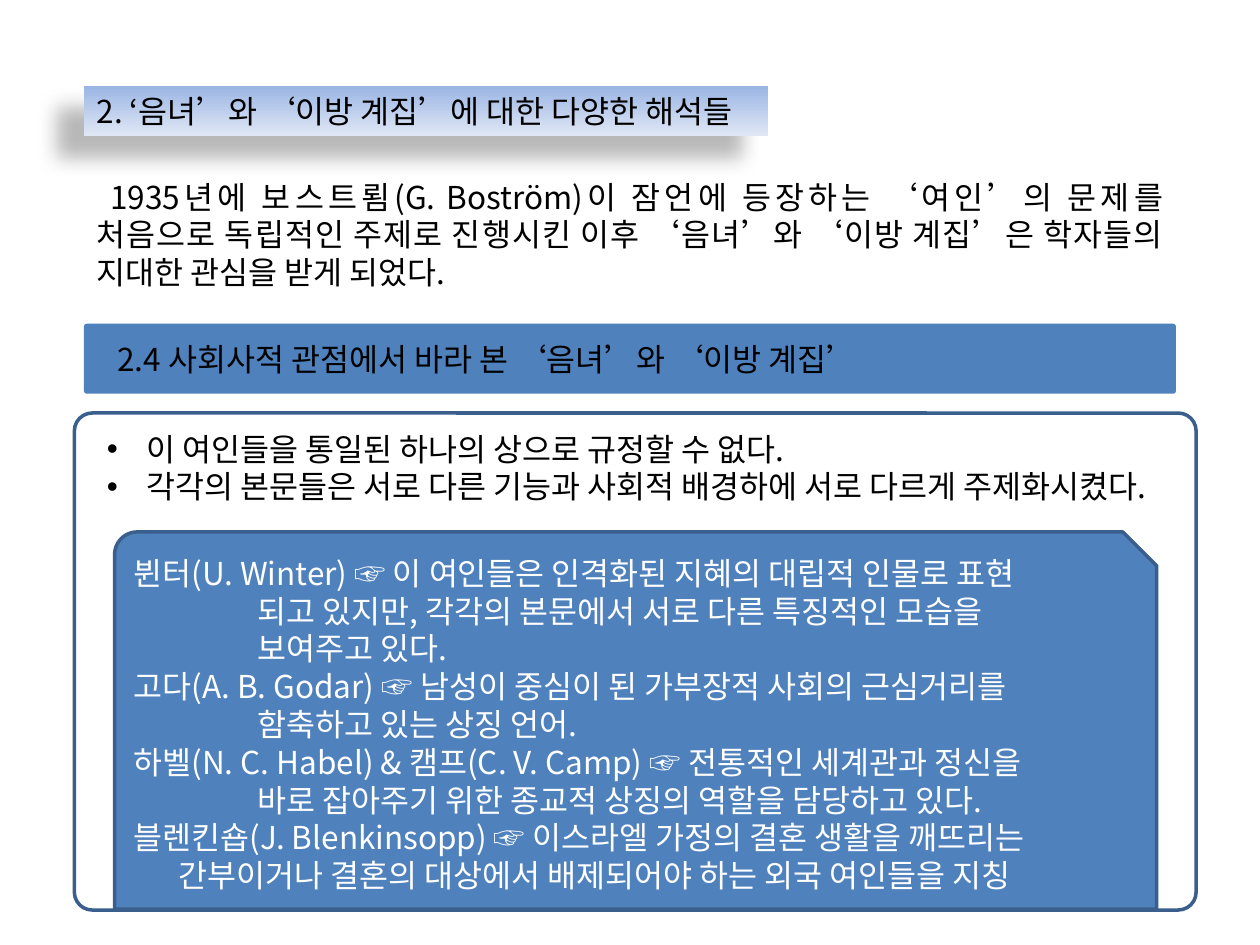
from lxml import etree
from pptx import Presentation
from pptx.dml.color import RGBColor
from pptx.enum.shapes import MSO_SHAPE
from pptx.enum.text import MSO_ANCHOR, PP_ALIGN
from pptx.oxml.ns import qn
from pptx.util import Pt

ROUNDED = MSO_SHAPE.ROUNDED_RECTANGLE
SNIP_ROUND = MSO_SHAPE.SNIP_ROUND_RECTANGLE
LEFT, JUSTIFY = PP_ALIGN.LEFT, PP_ALIGN.JUSTIFY
TOP, MIDDLE = MSO_ANCHOR.TOP, MSO_ANCHOR.MIDDLE

BLACK = RGBColor(0x00, 0x00, 0x00)
WHITE = RGBColor(0xFF, 0xFF, 0xFF)
BLUE = RGBColor(0x4F, 0x81, 0xBD)
DARK_BLUE = RGBColor(0x3A, 0x5F, 0x8C)
GRADIENT = (RGBColor(0x9A, 0xB5, 0xE4), RGBColor(0xE1, 0xE8, 0xF5))

FONT = "Noto Sans CJK KR"
SIZE = Pt(18)
LINE = Pt(21.6)
DEEP, SHALLOW = 71, 25.5

TITLE = "2. ‘음녀’와 ‘이방 계집’에 대한 다양한 해석들"
INTRO = ("1935년에 보스트룀(G. Boström)이 잠언에 등장하는 ‘여인’의 문제를 처음으로 "
         "독립적인 주제로 진행시킨 이후 ‘음녀’와 ‘이방 계집’은 학자들의 지대한 관심을 "
         "받게 되었다.")
SECTION = "2.4 사회사적 관점에서 바라 본 ‘음녀’와 ‘이방 계집’"
POINTS = [
    "이 여인들을 통일된 하나의 상으로 규정할 수 없다.",
    "각각의 본문들은 서로 다른 기능과 사회적 배경하에 서로 다르게 주제화시켰다.",
]
SCHOLARS = [
    ("뷘터(U. Winter) ☞ 이 여인들은 인격화된 지혜의 대립적 인물로 표현", 0),
    ("되고 있지만, 각각의 본문에서 서로 다른 특징적인 모습을", DEEP),
    ("보여주고 있다.", DEEP),
    ("고다(A. B. Godar) ☞ 남성이 중심이 된 가부장적 사회의 근심거리를", 0),
    ("함축하고 있는 상징 언어.", DEEP),
    ("하벨(N. C. Habel) & 캠프(C. V. Camp) ☞ 전통적인 세계관과 정신을", 0),
    ("바로 잡아주기 위한 종교적 상징의 역할을 담당하고 있다.", DEEP),
    ("블렌킨숍(J. Blenkinsopp) ☞ 이스라엘 가정의 결혼 생활을 깨뜨리는", 0),
    ("간부이거나 결혼의 대상에서 배제되어야 하는 외국 여인들을 지칭", SHALLOW),
]


def place(s, left, top, width, height):
    s.left, s.top, s.width, s.height = map(Pt, (left, top, width, height))


def write(s, lines, color=BLACK, align=LEFT, anchor=TOP, bullet=False):
    """Fill a shape with (text, left margin, first-line indent) paragraphs."""
    tf = s.text_frame
    tf.word_wrap = True
    tf.vertical_anchor = anchor
    for i, (text, margin, indent) in enumerate(lines):
        p = tf.paragraphs[0] if i == 0 else tf.add_paragraph()
        p.text = text
        p.alignment = align
        p.line_spacing = LINE
        pPr = p._p.get_or_add_pPr()
        pPr.set("marL", str(Pt(margin)))
        pPr.set("indent", str(Pt(indent)))
        if bullet:
            etree.SubElement(pPr, qn("a:buFont")).set("typeface", "Arial")
            etree.SubElement(pPr, qn("a:buChar")).set("char", "•")
        for r in p.runs:
            r.font.name, r.font.size = FONT, SIZE
            r.font.color.rgb = color
            etree.SubElement(r.font._element, qn("a:ea")).set("typeface", FONT)


def add_text(slide, box, lines, **style):
    s = slide.shapes.add_textbox(*map(Pt, box))
    write(s, lines, **style)


def add_panel(slide, kind, box, adjustments, fill=None, line=None):
    s = slide.shapes.add_shape(kind, *map(Pt, box))
    s.shadow.inherit = False
    for i, value in enumerate(adjustments):
        s.adjustments[i] = value
    if fill is None:
        s.fill.background()
    else:
        s.fill.solid()
        s.fill.fore_color.rgb = fill
    if line is None:
        s.line.fill.background()
    else:
        s.line.color.rgb = line
        s.line.width = Pt(2)
    return s


def add_shadow(s, blur, distance, degrees, opacity):
    effects = etree.SubElement(s._element.spPr, qn("a:effectLst"))
    shadow = etree.SubElement(
        effects, qn("a:outerShdw"), blurRad=str(Pt(blur)), dist=str(Pt(distance)),
        dir=str(degrees * 60000), algn="ctr", rotWithShape="0")
    color = etree.SubElement(shadow, qn("a:srgbClr"), val=str(BLACK))
    etree.SubElement(color, qn("a:alpha"), val=str(opacity * 1000))


def format_title(s):
    place(s, 48, 49, 391, 29)
    write(s, [(TITLE, 0, 0)], anchor=MIDDLE)
    s.fill.gradient()
    s.fill.gradient_angle = 270
    for stop, color in zip(s.fill.gradient_stops, GRADIENT):
        stop.color.rgb = color
    add_shadow(s, 11.8, 19.7, 141, 28)


def main():
    prs = Presentation()
    prs.slide_width, prs.slide_height = Pt(720), Pt(540)
    slide = prs.slides.add_slide(prs.slide_layouts[5])

    format_title(slide.shapes.title)
    add_text(slide, (48, 98, 624, 73), [(INTRO, 0, 8)], align=JUSTIFY)

    add_panel(slide, ROUNDED, (42.5, 236, 641, 284), [0.036], line=DARK_BLUE)
    add_text(slide, (54, 242, 625, 73), [(t, 22.5, -22.5) for t in POINTS], bullet=True)
    scholars = add_panel(slide, SNIP_ROUND, (65.5, 304, 595.5, 215.5), [0.06, 0.09],
                         fill=BLUE, line=DARK_BLUE)
    write(scholars, [(t, m, 0) for t, m in SCHOLARS], color=WHITE, anchor=MIDDLE)

    add_panel(slide, ROUNDED, (48, 185, 624, 40), [0.04], fill=BLUE)
    add_text(slide, (60, 191, 584, 29), [(SECTION, 0, 0)])

    prs.save("out.pptx")


if __name__ == "__main__":
    main()
